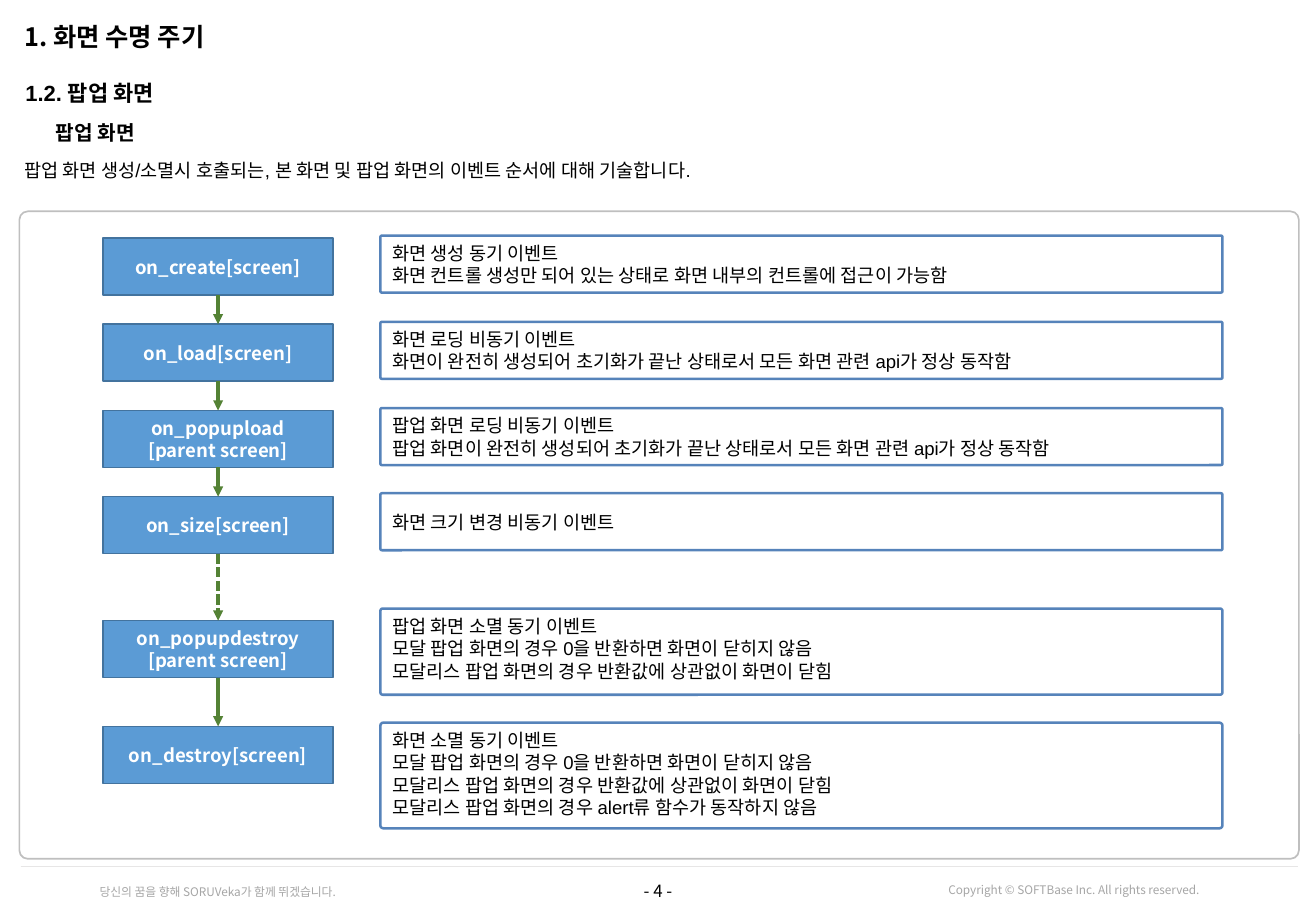
import itertools

import lxml.etree
import pptx
import pptx.dml.color
import pptx.enum.dml
import pptx.enum.shapes
import pptx.enum.text
import pptx.oxml.ns
import pptx.util

Pt = pptx.util.Pt
SHAPES = pptx.enum.shapes.MSO_SHAPE
ALIGN = pptx.enum.text.PP_ALIGN
ANCHOR = pptx.enum.text.MSO_ANCHOR
SANS = "Noto Sans CJK KR"
COLOURS = {
    "text": "000000", "white": "FFFFFF", "footer": "A6A6A6", "rule": "E7E6E6",
    "panel": "BFBFBF", "step": "5B9BD5", "step edge": "43739E",
    "arrow": "548235", "note edge": "5683BA",
}
LINE_HEIGHT = 13.3
STEP_HEIGHT = 33.8
STEPS = [
    (15.8, "on_create[screen]", 14.4, 33.8,
     "화면 생성 동기 이벤트\n화면 컨트롤 생성만 되어 있는 상태로 화면 내부의 컨트롤에 접근이 가능함"),
    (66.9, "on_load[screen]", 65.5, 33.8,
     "화면 로딩 비동기 이벤트\n화면이 완전히 생성되어 초기화가 끝난 상태로서 모든 화면 관련 api가 정상 동작함"),
    (118, "on_popupload\n[parent screen]", 116.6, 33.8,
     "팝업 화면 로딩 비동기 이벤트\n"
     "팝업 화면이 완전히 생성되어 초기화가 끝난 상태로서 모든 화면 관련 api가 정상 동작함"),
    (169.1, "on_size[screen]", 167.1, 33.8, "화면 크기 변경 비동기 이벤트"),
    (242.6, "on_popupdestroy\n[parent screen]", 235.4, 51.1,
     "팝업 화면 소멸 동기 이벤트\n모달 팝업 화면의 경우 0을 반환하면 화면이 닫히지 않음\n"
     "모달리스 팝업 화면의 경우 반환값에 상관없이 화면이 닫힘"),
    (305.3, "on_destroy[screen]", 303.1, 62.6,
     "화면 소멸 동기 이벤트\n모달 팝업 화면의 경우 0을 반환하면 화면이 닫히지 않음\n"
     "모달리스 팝업 화면의 경우 반환값에 상관없이 화면이 닫힘\n"
     "모달리스 팝업 화면의 경우 alert류 함수가 동작하지 않음"),
]


def colour(name):
    """Return the named colour."""
    return pptx.dml.color.RGBColor.from_string(COLOURS[name])


def write(shape, text, size=11, font=SANS, ink="text", bold=False,
          align=ALIGN.LEFT, anchor=ANCHOR.TOP, inset=None):
    """Write each line of the text as a paragraph of the shape."""
    frame = shape.text_frame
    frame.word_wrap = True
    frame.vertical_anchor = anchor
    if inset is not None:
        frame.margin_left = frame.margin_right = Pt(inset)
        frame.margin_top = frame.margin_bottom = Pt(inset)
    for index, line in enumerate(text.split("\n")):
        para = frame.add_paragraph() if index else frame.paragraphs[0]
        para.alignment = align
        para.line_spacing = Pt(round(size * LINE_HEIGHT / 11, 1))
        span = para.add_run()
        span.text = line
        span.font.size = Pt(size)
        span.font.name = font
        span.font.bold = bold
        span.font.color.rgb = colour(ink)
        east = lxml.etree.SubElement(span.font._element, pptx.oxml.ns.qn("a:ea"))
        east.set("typeface", SANS)


def add_text(page, box, text, **style):
    """Place a text box."""
    write(page.shapes.add_textbox(*map(Pt, box)), text, **style)


def add_box(page, kind, box, fill=None, edge=None, width=1, corner=None):
    """Place a preset shape and return it."""
    shape = page.shapes.add_shape(kind, *map(Pt, box))
    shape.shadow.inherit = False
    if corner is not None:
        shape.adjustments[0] = corner
    if fill:
        shape.fill.solid()
        shape.fill.fore_color.rgb = colour(fill)
    else:
        shape.fill.background()
    if edge:
        shape.line.color.rgb = colour(edge)
        shape.line.width = Pt(width)
    else:
        shape.line.fill.background()
    return shape


def add_line(page, ends, ink, width, arrow=False, dashed=False):
    """Draw a straight line between two points."""
    line = page.shapes.add_connector(
        pptx.enum.shapes.MSO_CONNECTOR.STRAIGHT, *map(Pt, ends))
    line.line.color.rgb = colour(ink)
    line.line.width = Pt(width)
    if dashed:
        line.line.dash_style = pptx.enum.dml.MSO_LINE.SQUARE_DOT
    if arrow:
        head = lxml.etree.SubElement(
            line.line._get_or_add_ln(), pptx.oxml.ns.qn("a:tailEnd"))
        head.set("type", "triangle")
    lxml.etree.SubElement(line._element.spPr, pptx.oxml.ns.qn("a:effectLst"))


def add_headings(page, box):
    """Place the chapter, section and topic headings and the introduction."""
    left, top, width, height = box
    rows = [
        (0, 0, 24.5, "1. 화면 수명 주기", 15, SANS, True),
        (0.7, 34.6, 20.2, "1.2. 팝업 화면", 13, "Arial", True),
        (18.7, 59, 20.2, "팝업 화면", 12, SANS, True),
        (0, 82.1, 25.9,
         "팝업 화면 생성/소멸시 호출되는, 본 화면 및 팝업 화면의 이벤트 순서에 대해 기술합니다.",
         11, "Arial", False),
    ]
    for indent, drop, tall, text, size, font, bold in rows:
        add_text(page, (left + indent, top + drop, width - indent, tall), text,
                 size=size, font=font, bold=bold, inset=2.9)


def add_note(page, box, text):
    """Place a framed event description."""
    left, top, width, height = box
    lines = text.count("\n") + 1
    tall = lines * LINE_HEIGHT + 7.2
    drop = (height - tall) / 2 if lines == 1 else 0
    paper = add_box(page, SHAPES.RECTANGLE,
                    (left, top + drop, width + 28, tall), fill="white")
    write(paper, text, font="Arial")
    add_box(page, SHAPES.ROUNDED_RECTANGLE, box, edge="note edge",
            width=1.5, corner=0.028)


def add_life_cycle(page, box):
    """Place the panel with the event steps, their arrows and notes."""
    left, top, width, height = box
    step_left, step_width = left + 49.7, 136.1
    middle = step_left + step_width / 2
    add_box(page, SHAPES.ROUNDED_RECTANGLE, box, edge="panel", corner=0.013)
    for step_top, name, note_top, note_height, note in STEPS:
        step = add_box(page, SHAPES.RECTANGLE,
                       (step_left, top + step_top, step_width, STEP_HEIGHT),
                       fill="step", edge="step edge")
        write(step, name, ink="white", bold=True,
              align=ALIGN.CENTER, anchor=ANCHOR.MIDDLE)
        add_note(page, (left + 213.9, top + note_top, 499, note_height), note)
    for upper, lower in itertools.pairwise(STEPS):
        add_line(page, (middle, top + upper[0] + STEP_HEIGHT, middle, top + lower[0]),
                 "arrow", 2, arrow=True, dashed=upper[1] == "on_size[screen]")


def add_footer(page, box):
    """Place the footer rule, slogan, page number and copyright line."""
    left, top, width, height = box
    small = {"size": 7, "ink": "footer", "align": ALIGN.RIGHT, "anchor": ANCHOR.MIDDLE}
    add_line(page, (left + 12.2, top, left + 769, top), "rule", 0.5)
    add_text(page, (left, top + 3.6, width, 22.3), "- 4 -", size=10,
             align=ALIGN.CENTER, anchor=ANCHOR.MIDDLE)
    add_text(page, (left + 41.8, top + 7.2, 164.2, 15.8),
             "당신의 꿈을 향해 SORUVeka가 함께 뛰겠습니다.", **small)
    add_text(page, (left + 554.4, top + 5.8, 163.4, 15.8),
             "Copyright © SOFTBase Inc. All rights reserved.", **small)


def main():
    """Build the slide and save the deck."""
    deck = pptx.Presentation()
    deck.slide_width, deck.slide_height = Pt(779.8), Pt(540)
    page = deck.slides.add_slide(deck.slide_layouts[6])
    add_footer(page, (0, 513.4, 779.8, 26.6))
    add_headings(page, (11.5, 9.4, 759.6, 108))
    add_life_cycle(page, (11.5, 125.3, 758.2, 383.8))
    deck.save("out.pptx")


if __name__ == "__main__":
    main()
